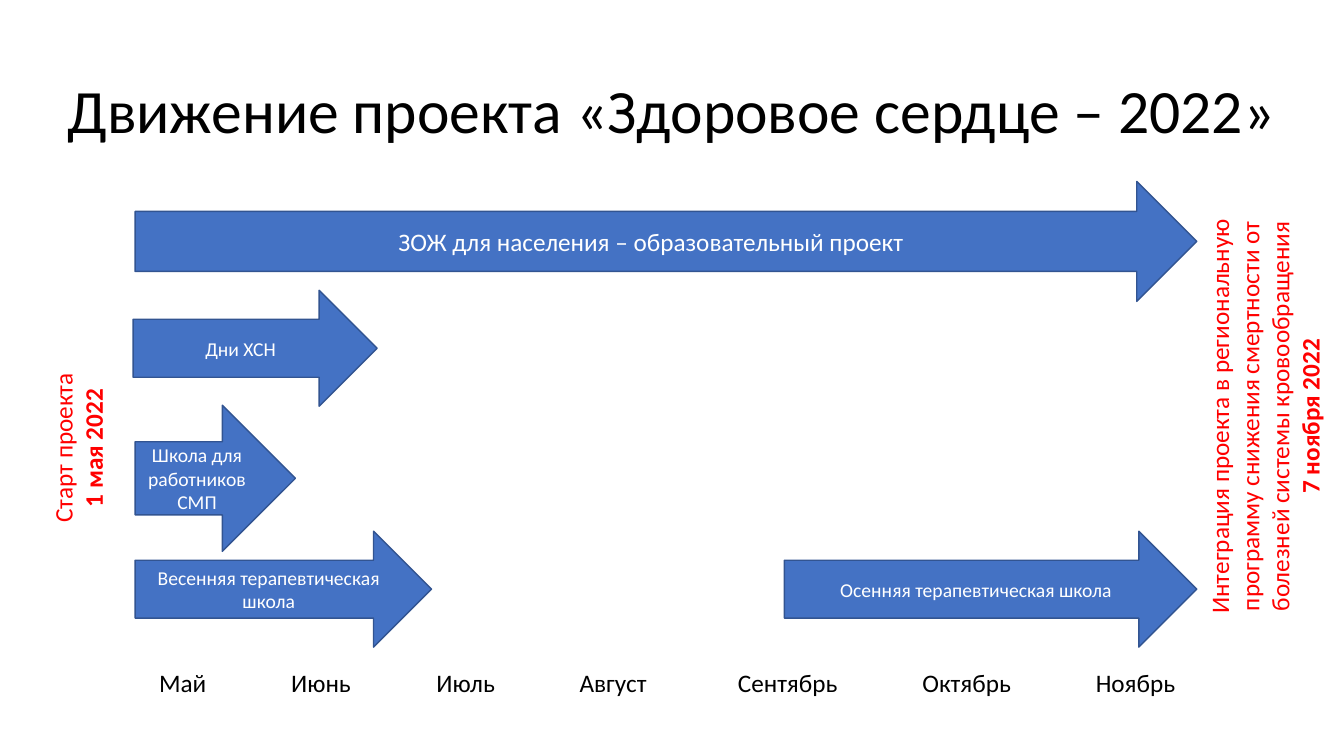
from pptx import Presentation
from pptx.dml.color import RGBColor
from pptx.enum.shapes import MSO_SHAPE
from pptx.enum.text import MSO_ANCHOR, MSO_AUTO_SIZE, PP_ALIGN
from pptx.oxml.ns import qn
from pptx.util import Inches, Pt
from lxml.etree import SubElement

BLACK = RGBColor(0x00, 0x00, 0x00)
WHITE = RGBColor(0xFF, 0xFF, 0xFF)
RED = RGBColor(0xFF, 0x00, 0x00)
BLUE = RGBColor(0x44, 0x72, 0xC4)
DARK_BLUE = RGBColor(0x32, 0x54, 0x91)

START, FINISH = 1.34, 11.87
SCHOOL_TOP, ARROW_HEIGHT = 5.27, 1.15
MONTHS_LEFT, INSET = 0.92, 0.1

deck = Presentation()
deck.slide_width, deck.slide_height = Inches(13.33), Inches(7.5)
page = deck.slides.add_slide(deck.slide_layouts[5])


def write(shape, lines, size, color, align=PP_ALIGN.CENTER):
    """Fill a shape with one paragraph per line and return its text frame."""
    frame = shape.text_frame
    frame.word_wrap = True
    frame.text = "\n".join(lines)
    for para in frame.paragraphs:
        para.alignment = align
        para.font.name = "Calibri"
        para.font.size = Pt(size)
        para.font.color.rgb = color
    return frame


title = page.shapes.title
title.left, title.top = 0, Inches(0.4)
title.width, title.height = deck.slide_width, Inches(1.45)
frame = write(title, ["Движение проекта «Здоровое сердце – 2022»"], 44, BLACK)
frame.auto_size = MSO_AUTO_SIZE.NONE
frame.vertical_anchor = MSO_ANCHOR.MIDDLE
frame.paragraphs[0].line_spacing = 0.9

# Month scale: one line of text, each month at its own tab stop
months = {"Май": 1.58, "Июнь": 2.89, "Июль": 4.33, "Август": 5.75,
          "Сентябрь": 7.32, "Октябрь": 9.15, "Ноябрь": 10.87}
box = page.shapes.add_textbox(Inches(MONTHS_LEFT), Inches(6.57), Inches(11.47), Inches(0.4))
frame = write(box, ["".join("\t" + month for month in months)], 18, BLACK, PP_ALIGN.LEFT)
properties = frame.paragraphs[0]._p.get_or_add_pPr()
tab_list = properties.makeelement(qn("a:tabLst"))
properties.insert_element_before(tab_list, "a:defRPr", "a:extLst")
for left in months.values():
    SubElement(tab_list, qn("a:tab"), pos=str(Inches(left - MONTHS_LEFT - INSET)), algn="l")

# Upright notes at both ends of the timeline, the date in bold
notes = [
    (0.42, 2.94, 0.81, 3.01, ["Старт проекта", "1 мая 2022"]),
    (11.89, 1.69, 1.41, 4.88,
     ["Интеграция проекта в региональную программу снижения смертности "
      "от болезней системы кровообращения", "7 ноября 2022"]),
]
for left, top, width, height, lines in notes:
    box = page.shapes.add_textbox(Inches(left), Inches(top), Inches(width), Inches(height))
    frame = write(box, lines, 18, RED)
    frame.paragraphs[-1].font.bold = True
    frame._txBody.bodyPr.set("vert", "vert270")

# Activities: left, top, right, height, font size, label
activities = [
    (START, 1.8, FINISH, 1.19, 18, "ЗОЖ для населения – образовательный проект"),
    (START, 4.02, 2.93, 1.45, 14, "Школа для работников СМП"),
    (START, SCHOOL_TOP, 4.28, ARROW_HEIGHT, 14, "Весенняя терапевтическая школа"),
    (1.32, 2.88, 3.74, ARROW_HEIGHT, 14, "Дни ХСН"),
    (7.78, SCHOOL_TOP, FINISH, ARROW_HEIGHT, 14, "Осенняя терапевтическая школа"),
]
for left, top, right, height, size, label in activities:
    arrow = page.shapes.add_shape(MSO_SHAPE.RIGHT_ARROW, Inches(left), Inches(top),
                                  Inches(right - left), Inches(height))
    arrow.shadow.inherit = False
    arrow.fill.solid()
    arrow.fill.fore_color.rgb = BLUE
    arrow.line.color.rgb = DARK_BLUE
    arrow.line.width = Pt(1)
    write(arrow, [label], size, WHITE).vertical_anchor = MSO_ANCHOR.MIDDLE

deck.save("out.pptx")
